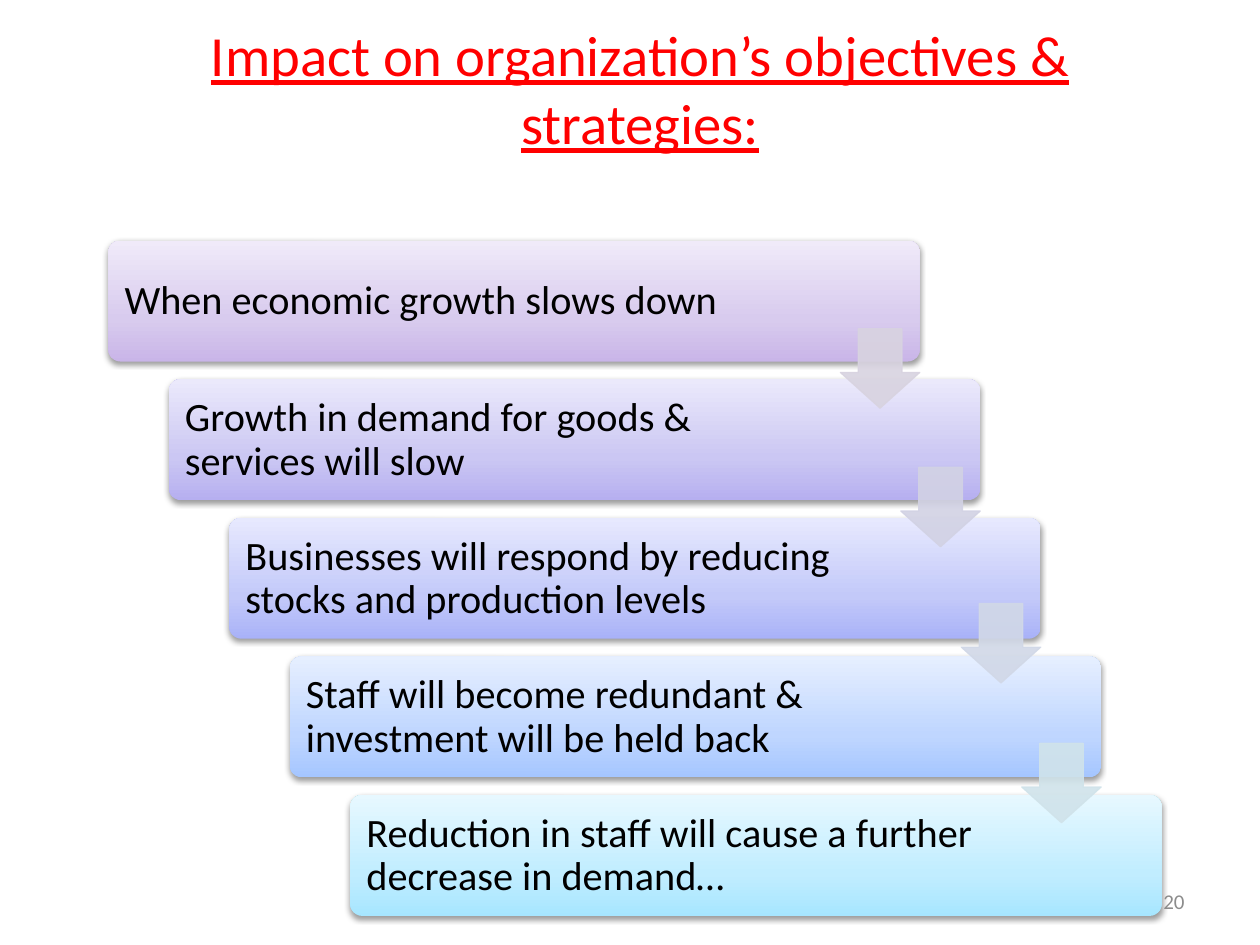
from dataclasses import dataclass

from pptx import Presentation
from pptx.dml.color import RGBColor
from pptx.enum.shapes import MSO_SHAPE as Shape
from pptx.enum.text import MSO_ANCHOR as Anchor, PP_ALIGN as Align
from pptx.oxml import parse_xml
from pptx.oxml.ns import nsdecls, qn
from pptx.util import Inches, Pt

COLORS = {"title": "FF0000", "text": "000000", "number": "8C8C8C", "shadow": "000000"}
FONT = "Calibri"

# Staircase geometry, in inches
LEFT, TOP = 0.86, 1.91
STEP_X, STEP_Y = 0.48, 1.1
BOX_W, BOX_H = 6.44, 0.96
INSET = 0.03
TEXT_W, TEXT_H = 5.27, 0.91
ARROW = 0.63


@dataclass
class Step:
    text: str
    gradient: tuple[str, str, str]  # bottom, 35 %, top


@dataclass
class Arrow:
    top: float
    color: str


STEPS = [
    Step("When economic growth slows down", ("C9B5E8", "D8CBEE", "F0EAF9")),
    Step("Growth in demand for goods & services will slow",
         ("B6AFF0", "CBC7F3", "EBE9FB")),
    Step("Businesses will respond by reducing stocks and production levels",
         ("A9B2F8", "C3C9F9", "E7E9FE")),
    Step("Staff will become redundant & investment will be held back",
         ("A5C6FF", "BFD6FF", "E6EFFF")),
    Step("Reduction in staff will cause a further decrease in demand…",
         ("A7E6FF", "C1EDFF", "E7F8FF")),
]
ARROWS = [Arrow(2.61, "D8D3E0"), Arrow(3.71, "D2D2E4"),
          Arrow(4.79, "D1D8E7"), Arrow(5.9, "D0E3EA")]


def add_text(slide, text: str, left: float, top: float, width: float, height: float,
             size: float, color: str, align=Align.LEFT, spacing: float = 1.0):
    s = slide.shapes.add_textbox(Inches(left), Inches(top), Inches(width), Inches(height))
    tf = s.text_frame
    tf.word_wrap = True
    tf.vertical_anchor = Anchor.MIDDLE
    tf.text = text
    p = tf.paragraphs[0]
    p.alignment = align
    p.line_spacing = spacing
    font = p.runs[0].font
    font.name, font.size = FONT, Pt(size)
    font.color.rgb = RGBColor.from_string(color)
    return s


def add_gradient(s, colors: tuple[str, str, str]) -> None:
    stops = "".join(f'<a:gs pos="{pos}"><a:srgbClr val="{color}"/></a:gs>'
                    for pos, color in zip((0, 35000, 100000), colors))
    s.element.spPr.find(qn("a:prstGeom")).addnext(parse_xml(
        f'<a:gradFill {nsdecls("a")} rotWithShape="1"><a:gsLst>{stops}</a:gsLst>'
        '<a:lin ang="16200000" scaled="0"/></a:gradFill>'))


def add_shadow(s) -> None:
    s.element.spPr.find(qn("a:effectLst")).append(parse_xml(
        f'<a:outerShdw {nsdecls("a")} blurRad="{Pt(3.1)}" dist="{Pt(1.6)}" '
        f'dir="5400000" rotWithShape="0"><a:srgbClr val="{COLORS["shadow"]}">'
        '<a:alpha val="38000"/></a:srgbClr></a:outerShdw>'))


def add_step(slide, index: int, step: Step) -> None:
    left, top = LEFT + index * STEP_X, TOP + index * STEP_Y
    s = slide.shapes.add_shape(Shape.ROUNDED_RECTANGLE, Inches(left), Inches(top),
                               Inches(BOX_W), Inches(BOX_H))
    s.adjustments[0] = 0.1
    s.shadow.inherit = False
    s.line.fill.background()
    add_gradient(s, step.gradient)
    add_shadow(s)
    label = add_text(slide, step.text, left + INSET, top + INSET, TEXT_W, TEXT_H,
                     23, COLORS["text"], spacing=0.9)
    tf = label.text_frame
    tf.margin_left = tf.margin_right = tf.margin_top = tf.margin_bottom = Inches(0.1)


def add_arrow(slide, index: int, arrow: Arrow) -> None:
    # Each arrow lines up with the right edge of its step
    left = LEFT + index * STEP_X + BOX_W - ARROW
    s = slide.shapes.add_shape(Shape.DOWN_ARROW, Inches(left), Inches(arrow.top),
                               Inches(ARROW), Inches(ARROW))
    s.adjustments[0], s.adjustments[1] = 0.55, 0.45
    s.shadow.inherit = False
    s.line.width = Pt(0.75)
    for fill in (s.fill, s.line.fill):
        fill.solid()
        fill.fore_color.rgb = RGBColor.from_string(arrow.color)
    for color in s.element.spPr.iter(qn("a:srgbClr")):
        color.append(parse_xml(f'<a:alpha {nsdecls("a")} val="90000"/>'))


def main() -> None:
    prs = Presentation()
    prs.slide_width, prs.slide_height = Inches(10), Inches(7.5)
    slide = prs.slides.add_slide(prs.slide_layouts[6])

    # Title
    title = add_text(slide, "Impact on organization’s objectives & strategies:",
                     0.62, 0.16, 8.92, 1.08, 32.4, COLORS["title"], Align.CENTER)
    title.text_frame.paragraphs[0].runs[0].font.underline = True

    # Staircase, with the arrows in front
    for i, step in enumerate(STEPS):
        add_step(slide, i, step)
    for i, arrow in enumerate(ARROWS):
        add_arrow(slide, i, arrow)

    # Slide number
    add_text(slide, "20", 7.17, 6.95, 2.33, 0.4, 12, COLORS["number"], Align.RIGHT)

    prs.save("out.pptx")


if __name__ == "__main__":
    main()
